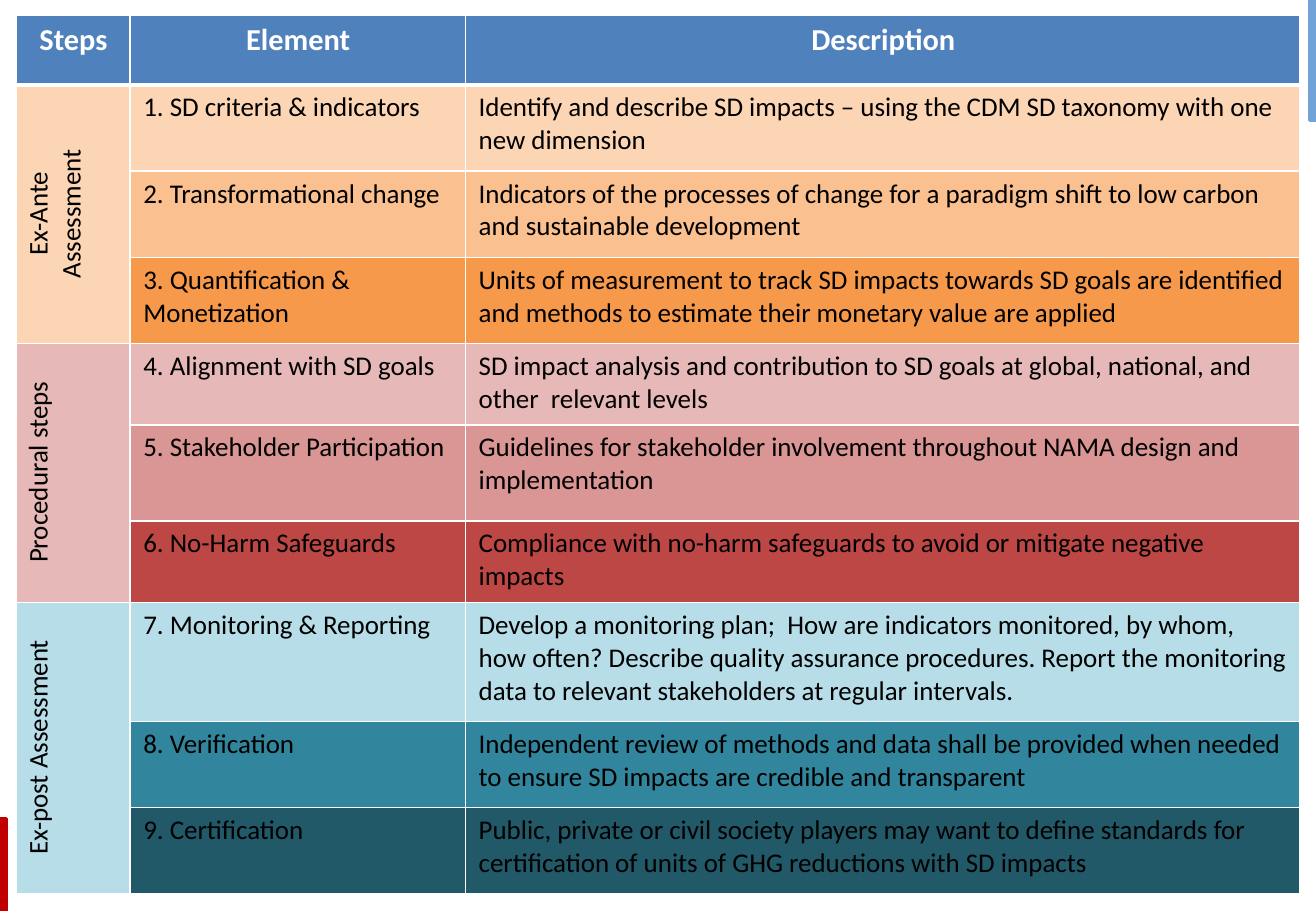
from dataclasses import dataclass

from lxml.etree import SubElement
from pptx import Presentation
from pptx.dml.color import RGBColor
from pptx.enum.shapes import MSO_SHAPE
from pptx.enum.text import PP_ALIGN
from pptx.oxml.ns import qn
from pptx.util import Inches, Pt

GRID_UNIT = Inches(0.01)
SLIDE_COLUMNS, SLIDE_ROWS = 1083, 750
TABLE_LEFT, TABLE_TOP = 13, 13
COLUMN_WIDTHS = (94, 276, 687)
HEADER_HEIGHT = 57
HEADINGS = ("Steps", "Element", "Description")

WHITE = RGBColor(0xFF, 0xFF, 0xFF)
BLACK = RGBColor(0x00, 0x00, 0x00)
HEADER_BLUE = RGBColor(0x4F, 0x81, 0xBD)
EDGE_BLUE = RGBColor(0x72, 0xA3, 0xD8)
EDGE_RED = RGBColor(0xC0, 0x00, 0x00)
PALE_ORANGE = RGBColor(0xFC, 0xD5, 0xB5)
LIGHT_ORANGE = RGBColor(0xFA, 0xC0, 0x90)
ORANGE = RGBColor(0xF7, 0x99, 0x4B)
PALE_RED = RGBColor(0xE6, 0xB9, 0xB8)
LIGHT_RED = RGBColor(0xD9, 0x96, 0x94)
RED = RGBColor(0xBC, 0x47, 0x44)
PALE_TEAL = RGBColor(0xB7, 0xDE, 0xE8)
TEAL = RGBColor(0x31, 0x85, 0x9C)
DARK_TEAL = RGBColor(0x21, 0x59, 0x68)


@dataclass(frozen=True)
class EdgeBar:
    left: int
    top: int
    height: int
    color: RGBColor


@dataclass(frozen=True)
class Element:
    name: str
    description: str
    height: int
    color: RGBColor


@dataclass(frozen=True)
class Step:
    label: str
    elements: tuple[Element, ...]


EDGE_BARS = (EdgeBar(1078, 0, 99, EDGE_BLUE), EdgeBar(0, 674, 76, EDGE_RED))

STEPS = (
    Step("Ex-Ante\nAssessment", (
        Element("1. SD criteria & indicators",
                "Identify and describe SD impacts – using the CDM SD taxonomy with one new dimension",
                71, PALE_ORANGE),
        Element("2. Transformational change",
                "Indicators of the processes of change for a paradigm shift to low carbon "
                "and sustainable development", 71, LIGHT_ORANGE),
        Element("3. Quantification & Monetization",
                "Units of measurement to track SD impacts towards SD goals are identified "
                "and methods to estimate their monetary value are applied", 71, ORANGE),
    )),
    Step("Procedural steps", (
        Element("4. Alignment with SD goals",
                "SD impact analysis and contribution to SD goals at global, national, and "
                "other  relevant levels", 67, PALE_RED),
        Element("5. Stakeholder Participation",
                "Guidelines for stakeholder involvement throughout NAMA design and implementation",
                79, LIGHT_RED),
        Element("6. No-Harm Safeguards",
                "Compliance with no-harm safeguards to avoid or mitigate negative impacts",
                67, RED),
    )),
    Step("Ex-post Assessment", (
        Element("7. Monitoring & Reporting",
                "Develop a monitoring plan;  How are indicators monitored, by whom, how often? "
                "Describe quality assurance procedures. Report the monitoring data to relevant "
                "stakeholders at regular intervals.", 98, PALE_TEAL),
        Element("8. Verification",
                "Independent review of methods and data shall be provided when needed to ensure "
                "SD impacts are credible and transparent", 71, TEAL),
        Element("9. Certification",
                "Public, private or civil society players may want to define standards for "
                "certification of units of GHG reductions with SD impacts", 71, DARK_TEAL),
    )),
)


def grid(count: int) -> int:
    return count * GRID_UNIT


def write_text(cell, text: str, *, size: int = 16, color: RGBColor = BLACK,
               bold: bool = False, align: PP_ALIGN = PP_ALIGN.LEFT) -> None:
    cell.text_frame.text = text
    for paragraph in cell.text_frame.paragraphs:
        paragraph.alignment = align
        for run in paragraph.runs:
            run.font.name = "Calibri"
            run.font.size = Pt(size)
            run.font.bold = bold
            run.font.color.rgb = color


def style_cell(cell, fill: RGBColor, *, top: int = 1, bottom: int = 1) -> None:
    cell.margin_left, cell.margin_right = grid(11), grid(10)
    cell.margin_top = cell.margin_bottom = grid(5)
    properties = cell._tc.get_or_add_tcPr()
    for side, width in (("L", 1), ("R", 1), ("T", top), ("B", bottom)):
        border = SubElement(properties, qn(f"a:ln{side}"), w=str(Pt(width)))
        border_fill = SubElement(border, qn("a:solidFill"))
        SubElement(border_fill, qn("a:srgbClr"), val=str(WHITE))
    cell.fill.solid()
    cell.fill.fore_color.rgb = fill


def add_edge_bar(slide, bar: EdgeBar) -> None:
    shape = slide.shapes.add_shape(MSO_SHAPE.FLOWCHART_PROCESS, grid(bar.left), grid(bar.top),
                                   grid(5), grid(bar.height))
    shape.shadow.inherit = False
    shape.fill.solid()
    shape.fill.fore_color.rgb = bar.color
    shape.line.color.rgb = bar.color
    shape.line.width = Pt(2)


def add_steps_table(slide) -> None:
    elements = [element for step in STEPS for element in step.elements]
    heights = [HEADER_HEIGHT] + [element.height for element in elements]
    table = slide.shapes.add_table(len(heights), len(COLUMN_WIDTHS), grid(TABLE_LEFT),
                                   grid(TABLE_TOP), grid(sum(COLUMN_WIDTHS)),
                                   grid(sum(heights))).table
    table.first_row = table.horz_banding = False
    for column, width in zip(table.columns, COLUMN_WIDTHS):
        column.width = grid(width)
    for row, height in zip(table.rows, heights):
        row.height = grid(height)

    for column_index, heading in enumerate(HEADINGS):
        cell = table.cell(0, column_index)
        style_cell(cell, HEADER_BLUE, bottom=3)
        write_text(cell, heading, size=18, color=WHITE, bold=True, align=PP_ALIGN.CENTER)

    row_index = 1
    for step in STEPS:
        step_cell = table.cell(row_index, 0)
        step_cell.merge(table.cell(row_index + len(step.elements) - 1, 0))
        write_text(step_cell, step.label, align=PP_ALIGN.CENTER)
        step_cell._tc.get_or_add_tcPr().set("vert", "vert270")
        for element in step.elements:
            top = 3 if row_index == 1 else 1
            style_cell(table.cell(row_index, 0), step.elements[0].color, top=top)
            for column_index, text in enumerate((element.name, element.description), start=1):
                cell = table.cell(row_index, column_index)
                style_cell(cell, element.color, top=top)
                write_text(cell, text)
            row_index += 1


def main() -> None:
    """Build the slide with the table of sustainable development assessment steps."""
    presentation = Presentation()
    presentation.slide_width = grid(SLIDE_COLUMNS)
    presentation.slide_height = grid(SLIDE_ROWS)
    slide = presentation.slides.add_slide(presentation.slide_layouts[6])
    for bar in EDGE_BARS:
        add_edge_bar(slide, bar)
    add_steps_table(slide)
    presentation.save("out.pptx")


if __name__ == "__main__":
    main()
